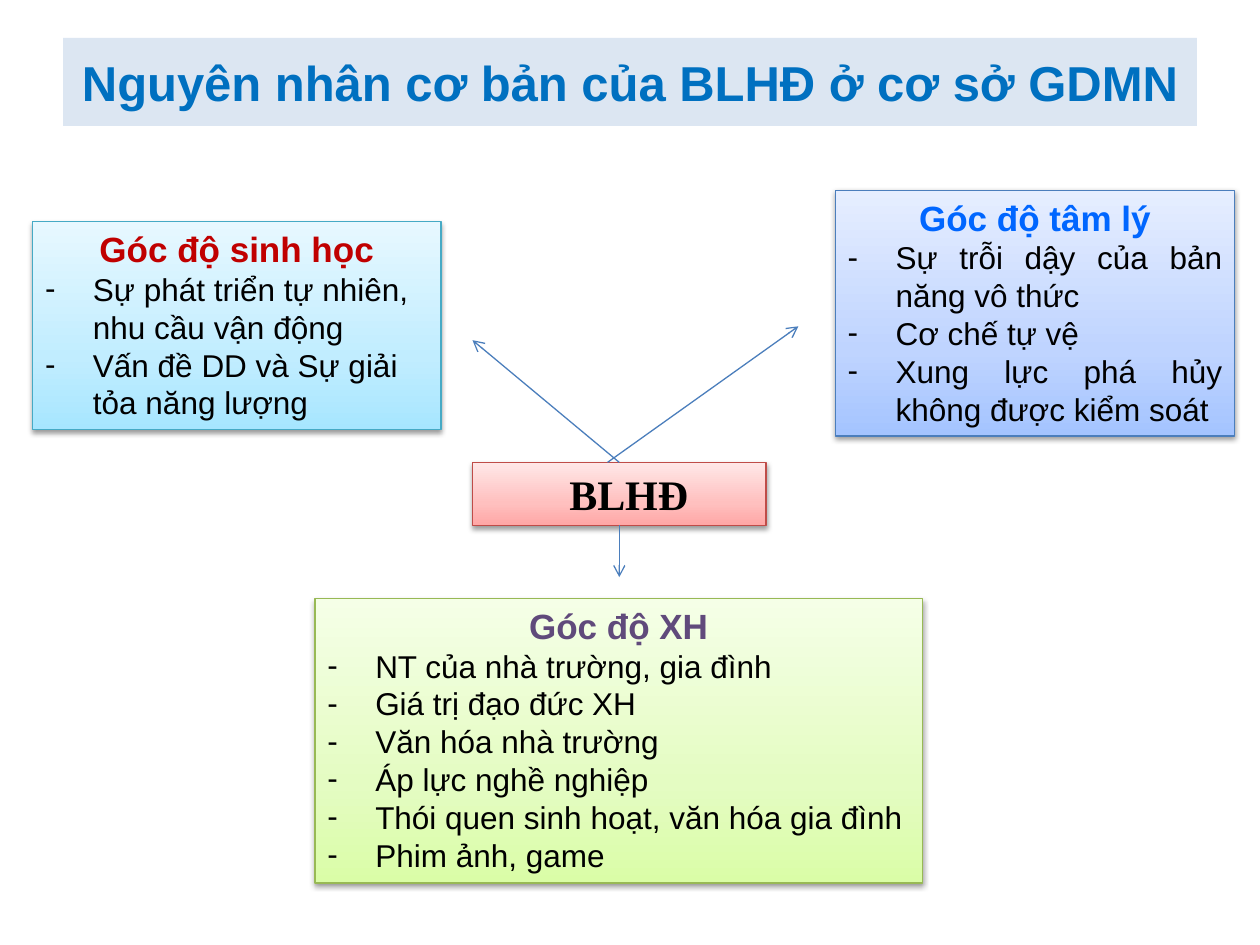
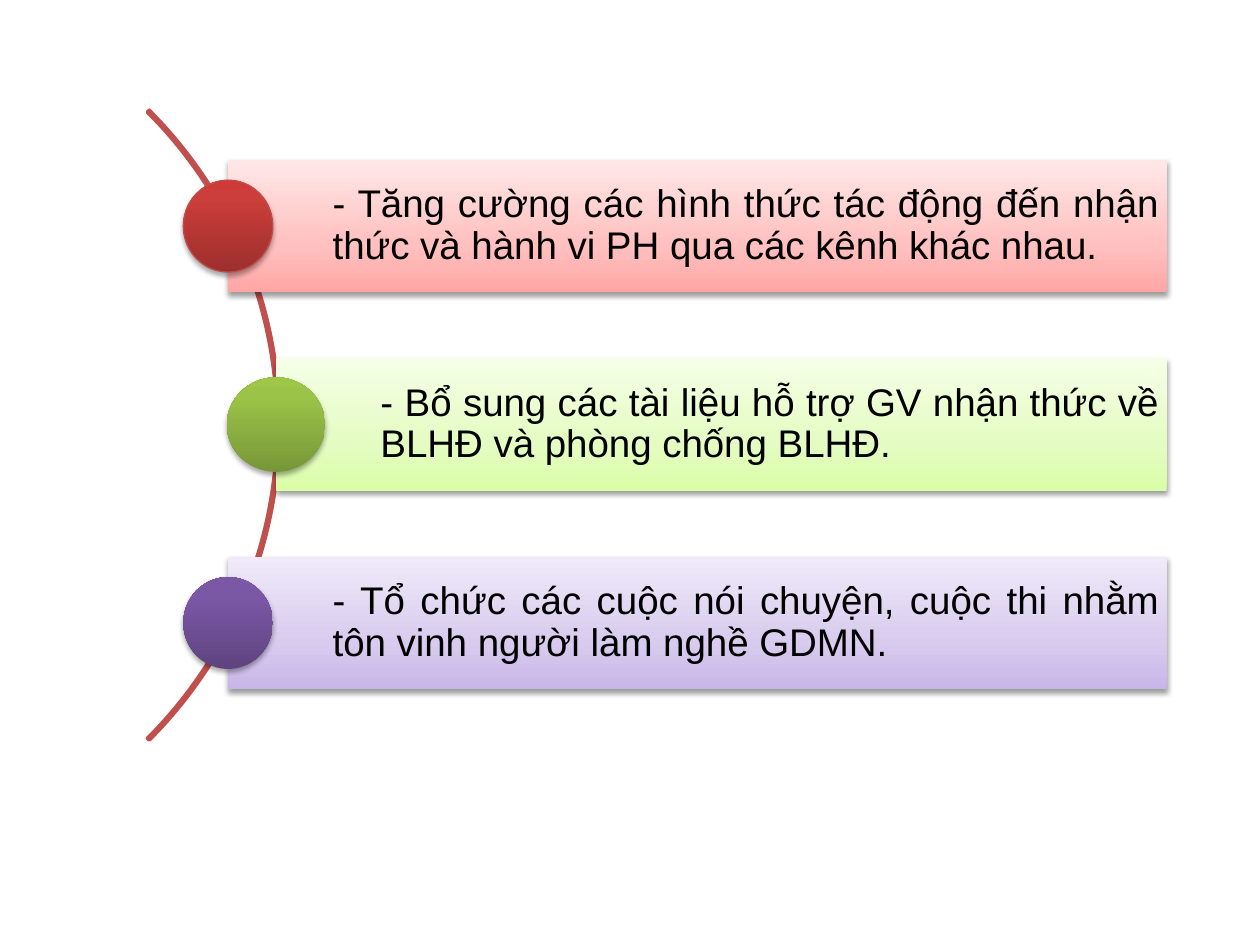
from dataclasses import dataclass

from lxml.etree import SubElement
from pptx import Presentation
from pptx.dml.color import RGBColor
from pptx.enum.shapes import MSO_CONNECTOR as Connector, MSO_SHAPE as Preset
from pptx.enum.text import MSO_ANCHOR as Anchor, MSO_AUTO_SIZE as AutoSize, PP_ALIGN as Align
from pptx.oxml.ns import qn
from pptx.util import Inches, Pt

WIDTH, HEIGHT = Inches(10), Inches(7.5)
COLUMN, ROW = WIDTH / 100, HEIGHT / 75

BLACK = RGBColor(0x00, 0x00, 0x00)
TITLE_BLUE = RGBColor(0x00, 0x70, 0xC0)
TITLE_BAND = RGBColor(0xDC, 0xE6, 0xF2)
HEADING_RED = RGBColor(0xC0, 0x00, 0x00)
HEADING_BLUE = RGBColor(0x00, 0x66, 0xFF)
HEADING_PURPLE = RGBColor(0x60, 0x4A, 0x7B)
ARROW_BLUE = RGBColor(0x4B, 0x7E, 0xBC)
EDGE_AQUA = RGBColor(0x46, 0xAA, 0xC5)
EDGE_GREEN = RGBColor(0x98, 0xB9, 0x55)
EDGE_RED = RGBColor(0xBF, 0x4C, 0x48)
ARC_RED = RGBColor(0xC0, 0x50, 0x4D)

PALE_STOPS, DEEP_STOPS = (0, 35, 100), (0, 80, 100)
PALE_AQUA = (RGBColor(0xA7, 0xE6, 0xFF), RGBColor(0xC1, 0xED, 0xFF), RGBColor(0xE7, 0xF8, 0xFF))
PALE_BLUE = (RGBColor(0xA4, 0xC4, 0xFF), RGBColor(0xBF, 0xD4, 0xFF), RGBColor(0xE6, 0xEE, 0xFF))
PALE_GREEN = (RGBColor(0xDA, 0xFD, 0xA7), RGBColor(0xE4, 0xFC, 0xC2), RGBColor(0xF5, 0xFF, 0xE7))
PALE_RED = (RGBColor(0xFF, 0xA6, 0xA5), RGBColor(0xFF, 0xC0, 0xBF), RGBColor(0xFF, 0xE7, 0xE7))
PALE_PURPLE = (RGBColor(0xC9, 0xB5, 0xE8), RGBColor(0xD8, 0xCB, 0xEE), RGBColor(0xF0, 0xEA, 0xF9))
DEEP_RED = (RGBColor(0x9C, 0x2F, 0x2D), RGBColor(0xCB, 0x3E, 0x3A), RGBColor(0xCE, 0x3B, 0x37))
DEEP_GREEN = (RGBColor(0x77, 0x97, 0x37), RGBColor(0x9B, 0xC3, 0x48), RGBColor(0x9D, 0xC7, 0x46))
DEEP_PURPLE = (RGBColor(0x5F, 0x44, 0x80), RGBColor(0x7B, 0x58, 0xA6), RGBColor(0x7C, 0x57, 0xA8))

TITLE = "Nguyên nhân cơ bản của BLHĐ ở cơ sở GDMN"
BIOLOGY = ("Góc độ sinh học", [
    "Sự phát triển tự nhiên, nhu cầu vận động",
    "Vấn đề DD và Sự giải tỏa năng lượng",
])
PSYCHOLOGY = ("Góc độ tâm lý", [
    "Sự trỗi dậy của bản năng vô thức",
    "Cơ chế tự vệ",
    "Xung lực phá hủy không được kiểm soát",
])
SOCIETY = ("Góc độ XH", [
    "NT của nhà trường, gia đình",
    "Giá trị đạo đức XH",
    "Văn hóa nhà trường",
    "Áp lực nghề nghiệp",
    "Thói quen sinh hoạt, văn hóa gia đình",
    "Phim ảnh, game",
])


@dataclass
class Box:
    """A region measured in grid columns and rows."""
    left: float
    top: float
    width: float
    height: float

    def point(self, across, down):
        """Return the grid point at these shares of the box."""
        return self.left + across * self.width, self.top + down * self.height

    def emu(self):
        """Return left, top, width and height as slide lengths."""
        return (round(self.left * COLUMN), round(self.top * ROW),
                round(self.width * COLUMN), round(self.height * ROW))


def write(frame, text, size=18, color=BLACK, bold=False, font="Arial", align=Align.LEFT,
          indent=0, bullet=None, spacing=None):
    """Add one formatted paragraph to the frame, filling an empty first one."""
    first = frame.paragraphs[0]
    paragraph = frame.add_paragraph() if first.runs else first
    paragraph.alignment, paragraph.line_spacing = align, spacing
    run = paragraph.add_run()
    run.text = text
    run.font.size, run.font.name, run.font.bold = Pt(size), font, bold
    run.font.color.rgb = color
    properties = paragraph._p.get_or_add_pPr()
    if indent:
        properties.set("marL", str(Inches(indent)))
    if bullet:
        properties.set("indent", str(-Inches(indent)))
        SubElement(properties, qn("a:buFont"), typeface=font)
        SubElement(properties, qn("a:buChar"), char=bullet)


def add_glossy(slide, preset, box, colors, stops=PALE_STOPS, edge=None, shade=38, drop=1.6):
    """Add a shape with a vertical gradient and a soft shadow below."""
    shape = slide.shapes.add_shape(preset, *box.emu())
    shape.fill.gradient()
    shape.fill.gradient_angle = 90
    stop_list = shape._element.spPr.find(qn("a:gradFill")).find(qn("a:gsLst"))
    stop_list.clear()
    for stop, color in zip(stops, colors):
        mark = SubElement(stop_list, qn("a:gs"), pos=str(stop * 1000))
        SubElement(mark, qn("a:srgbClr"), val=str(color))
    if edge:
        shape.line.color.rgb, shape.line.width = edge, Pt(0.75)
    else:
        shape.line.fill.background()
    shape.shadow.inherit = False
    effects = shape._element.spPr.find(qn("a:effectLst"))
    shadow = SubElement(effects, qn("a:outerShdw"), blurRad=str(Pt(3.1)), dist=str(Pt(drop)),
                        dir="5400000", rotWithShape="0")
    tint = SubElement(shadow, qn("a:srgbClr"), val=str(BLACK))
    SubElement(tint, qn("a:alpha"), val=str(shade * 1000))
    shape.text_frame.word_wrap = True
    return shape


def add_arrow(slide, start, end):
    """Draw a thin open arrow between two grid points."""
    ends = [round(value * unit) for point in (start, end)
            for value, unit in zip(point, (COLUMN, ROW))]
    arrow = slide.shapes.add_connector(Connector.STRAIGHT, *ends)
    arrow.line.color.rgb, arrow.line.width = ARROW_BLUE, Pt(0.75)
    SubElement(arrow.line._get_or_add_ln(), qn("a:tailEnd"), type="arrow")
    SubElement(arrow._element.spPr, qn("a:effectLst"))


def add_title(slide, box):
    """Place the title placeholder as a tinted band."""
    title = slide.shapes.title
    title.left, title.top, title.width, title.height = box.emu()
    title.fill.solid()
    title.fill.fore_color.rgb = TITLE_BAND
    frame = title.text_frame
    frame.auto_size, frame.vertical_anchor = AutoSize.NONE, Anchor.MIDDLE
    write(frame, TITLE, size=28, color=TITLE_BLUE, bold=True, align=Align.CENTER)


def add_cause(slide, box, content, heading_color, colors, edge, align=Align.LEFT):
    """Draw a cause panel with its heading and dashed list."""
    heading, points = content
    frame = add_glossy(slide, Preset.RECTANGLE, box, colors, edge=edge).text_frame
    frame.vertical_anchor = Anchor.TOP
    write(frame, heading, size=20, color=heading_color, bold=True, align=Align.CENTER)
    for point in points:
        write(frame, point, align=align, indent=0.38, bullet="-")


def add_hub(slide, box):
    """Draw the central label and the arrows that leave it."""
    frame = add_glossy(slide, Preset.RECTANGLE, box, PALE_RED, edge=EDGE_RED).text_frame
    frame.vertical_anchor = Anchor.TOP
    write(frame, "BLHĐ", size=24, bold=True, font="Times New Roman", indent=0.67)
    add_arrow(slide, box.point(0.5, 0), box.point(0, -1.94))
    add_arrow(slide, box.point(0.46, 0), box.point(1.11, -2.16))
    add_arrow(slide, box.point(0.5, 1), box.point(0.5, 1.82))


def build_causes(slide):
    """Lay out the causes around the hub."""
    add_title(slide, Box(5, 3, 90, 7))
    add_cause(slide, Box(2.6, 17.6, 32.4, 16.5), BIOLOGY, HEADING_RED, PALE_AQUA, EDGE_AQUA)
    add_cause(slide, Box(66.3, 15.1, 31.7, 19.5), PSYCHOLOGY, HEADING_BLUE, PALE_BLUE,
              ARROW_BLUE, align=Align.JUSTIFY)
    add_cause(slide, Box(25, 47.5, 48.2, 22.6), SOCIETY, HEADING_PURPLE, PALE_GREEN, EDGE_GREEN)
    add_hub(slide, Box(37.5, 36.7, 23.3, 5))


def add_arc(slide, box):
    """Draw the curve that strings the measures together."""
    arc = slide.shapes.add_shape(Preset.BLOCK_ARC, *box.emu())
    for index, value in enumerate((189, 27, 0.003)):
        arc.adjustments[index] = value
    arc.fill.background()
    arc.line.color.rgb, arc.line.width = ARC_RED, Pt(2)
    arc.shadow.inherit = False


def add_measure(slide, box, text, colors, dot_colors, dot_size, dot_edge=None):
    """Draw a measure bar with a dot centred on its left edge."""
    bar = add_glossy(slide, Preset.RECTANGLE, box, colors)
    frame = bar.text_frame
    frame.vertical_anchor = Anchor.MIDDLE
    frame.margin_left = Inches(0.83)
    frame.margin_top = frame.margin_right = frame.margin_bottom = Inches(0.06)
    write(frame, text, size=22, align=Align.JUSTIFY, spacing=0.9)
    width, height = dot_size
    center_x, center_y = box.point(0, 0.5)
    dot = Box(center_x - width / 2, center_y - height / 2, width, height)
    add_glossy(slide, Preset.OVAL, dot, dot_colors, stops=DEEP_STOPS, edge=dot_edge,
               shade=35, drop=1.8)


def build_measures(slide):
    """Stack the measures at equal steps along the arc."""
    add_arc(slide, Box(-48.5, -1.6, 70.7, 70.7))
    right, top, step, height = 92.6, 12.7, 15.75, 10.5
    small, large = (7.1, 7.3), (7.8, 7.5)
    measures = [
        (18.1, "- Tăng cường các hình thức tác động đến nhận thức và hành vi PH qua các kênh "
         "khác nhau.", PALE_RED, DEEP_RED, small, EDGE_RED),
        (21.9, "- Bổ sung các tài liệu hỗ trợ GV nhận thức về BLHĐ và phòng chống BLHĐ.",
         PALE_GREEN, DEEP_GREEN, large),
        (18.1, "- Tổ chức các cuộc nói chuyện, cuộc thi nhằm tôn vinh người làm nghề GDMN.",
         PALE_PURPLE, DEEP_PURPLE, small),
    ]
    for index, (left, *details) in enumerate(measures):
        add_measure(slide, Box(left, top + index * step, right - left, height), *details)


def main():
    """Build both slides and save the deck."""
    deck = Presentation()
    deck.slide_width, deck.slide_height = WIDTH, HEIGHT
    title_only, blank = deck.slide_layouts[5], deck.slide_layouts[6]
    build_causes(deck.slides.add_slide(title_only))
    build_measures(deck.slides.add_slide(blank))
    deck.save("out.pptx")


if __name__ == "__main__":
    main()
